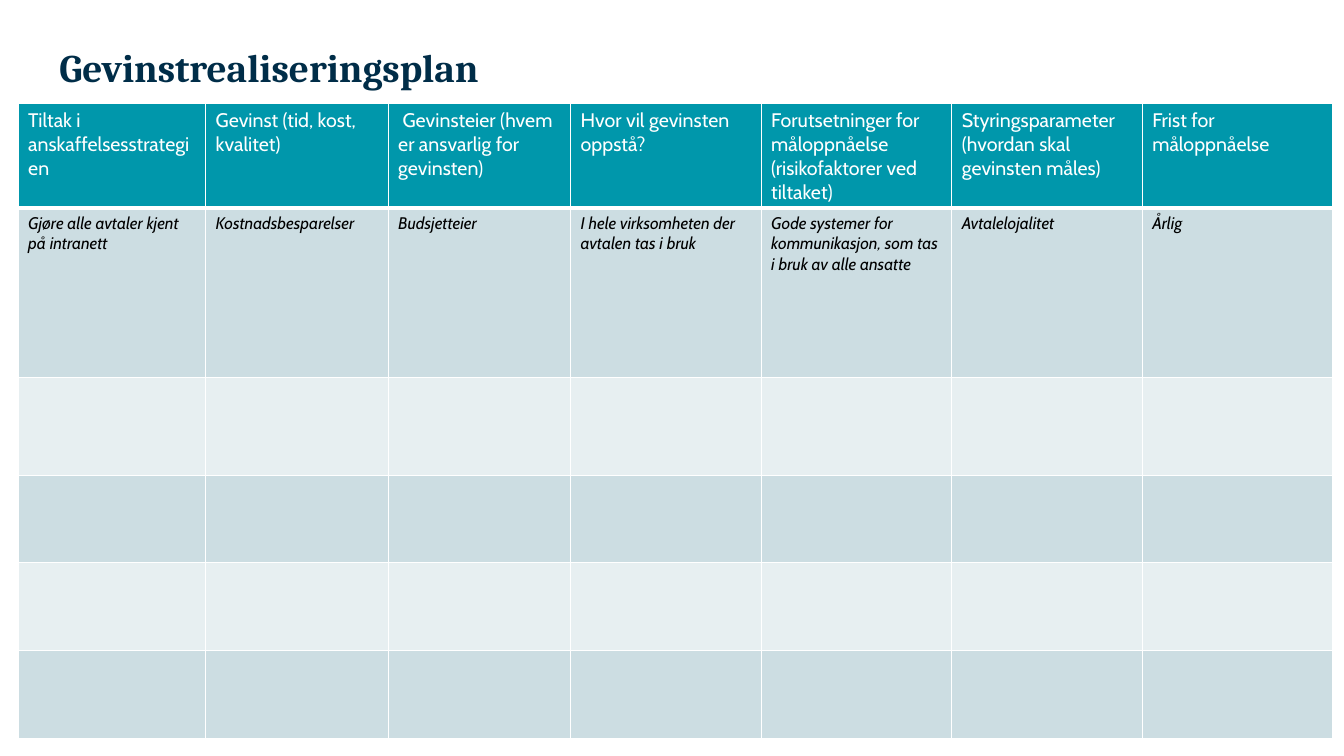
from dataclasses import dataclass

from lxml.etree import SubElement
from pptx import Presentation
from pptx.dml.color import RGBColor
from pptx.enum.text import MSO_ANCHOR
from pptx.oxml.ns import qn
from pptx.util import Inches, Pt


@dataclass(frozen=True)
class Theme:
    title_font: str = "Cambria"
    body_font: str = "Cabin"
    navy: str = "002D48"
    teal: str = "0097AB"
    band_dark: str = "CCDDE2"
    band_light: str = "E7EFF1"
    white: str = "FFFFFF"
    black: str = "000000"
    title_size: int = 28
    header_size: int = 14
    example_size: int = 12
    grid_width: int = 1
    header_rule_width: int = 3


THEME = Theme()

COLUMN_WIDTHS = [1.86, 1.81, 1.81] + [1.89] * 4
ROW_HEIGHTS = [1.02, 1.68, 0.97] + [0.87] * 3

HEADINGS = [
    "Tiltak i anskaffelsesstrategien",
    "Gevinst (tid, kost, kvalitet)",
    " Gevinsteier (hvem er ansvarlig for gevinsten)",
    "Hvor vil gevinsten oppstå?",
    "Forutsetninger for måloppnåelse (risikofaktorer ved tiltaket)",
    "Styringsparameter (hvordan skal gevinsten måles)",
    "Frist for måloppnåelse",
]
EXAMPLE = [
    "Gjøre alle avtaler kjent på intranett ",
    "Kostnadsbesparelser",
    "Budsjetteier",
    "I hele virksomheten der avtalen tas i bruk",
    "Gode systemer for kommunikasjon, som tas i bruk av alle ansatte",
    "Avtalelojalitet",
    "Årlig",
]


def style_font(paragraph, name, size, color, bold=False, italic=False):
    font = paragraph.font
    font.name = name
    font.size = Pt(size)
    font.bold = bold
    font.italic = italic
    font.color.rgb = RGBColor.from_string(color)


def add_title(slide, wording):
    title = slide.shapes.add_textbox(
        Inches(0.59), Inches(0.48), Inches(12.14), Inches(0.77)
    )
    frame = title.text_frame
    frame.word_wrap = True
    frame.vertical_anchor = MSO_ANCHOR.TOP
    frame.margin_left = frame.margin_right = 0
    frame.margin_top = frame.margin_bottom = 0
    heading = frame.paragraphs[0]
    heading.text = wording
    heading.line_spacing = 0.9
    style_font(heading, THEME.title_font, THEME.title_size, THEME.navy, bold=True)


def add_borders(cell, bottom_width):
    """Draw white rules on all four sides; call before filling the cell."""
    properties = cell._tc.get_or_add_tcPr()
    widths = {side: THEME.grid_width for side in ("lnL", "lnR", "lnT")}
    widths["lnB"] = bottom_width
    for side, width in widths.items():
        rule = SubElement(properties, qn(f"a:{side}"), w=str(Pt(width)))
        fill = SubElement(rule, qn("a:solidFill"))
        SubElement(fill, qn("a:srgbClr"), val=THEME.white)


def style_cell(cell, row):
    is_header = row == 0
    add_borders(cell, THEME.header_rule_width if is_header else THEME.grid_width)
    band = THEME.band_dark if row % 2 else THEME.band_light
    cell.fill.solid()
    cell.fill.fore_color.rgb = RGBColor.from_string(THEME.teal if is_header else band)
    paragraph = cell.text_frame.paragraphs[0]
    if is_header:
        style_font(paragraph, THEME.body_font, THEME.header_size, THEME.white)
    else:
        style_font(
            paragraph, THEME.body_font, THEME.example_size, THEME.black, italic=True
        )


def add_plan_table(slide, filled_rows):
    plan = slide.shapes.add_table(
        len(ROW_HEIGHTS), len(COLUMN_WIDTHS),
        Inches(0.18), Inches(1.03),
        Inches(sum(COLUMN_WIDTHS)), Inches(sum(ROW_HEIGHTS)),
    ).table
    for column, width in zip(plan.columns, COLUMN_WIDTHS):
        column.width = Inches(width)
    for row, height in zip(plan.rows, ROW_HEIGHTS):
        row.height = Inches(height)
    for row, entries in enumerate(filled_rows):
        for column, entry in enumerate(entries):
            plan.cell(row, column).text = entry
    for row in range(len(ROW_HEIGHTS)):
        for column in range(len(COLUMN_WIDTHS)):
            style_cell(plan.cell(row, column), row)


def main():
    presentation = Presentation()
    presentation.slide_width = Inches(13.33)
    presentation.slide_height = Inches(7.5)
    slide = presentation.slides.add_slide(presentation.slide_layouts[6])
    add_title(slide, "Gevinstrealiseringsplan")
    add_plan_table(slide, [HEADINGS, EXAMPLE])
    presentation.save("out.pptx")


if __name__ == "__main__":
    main()
